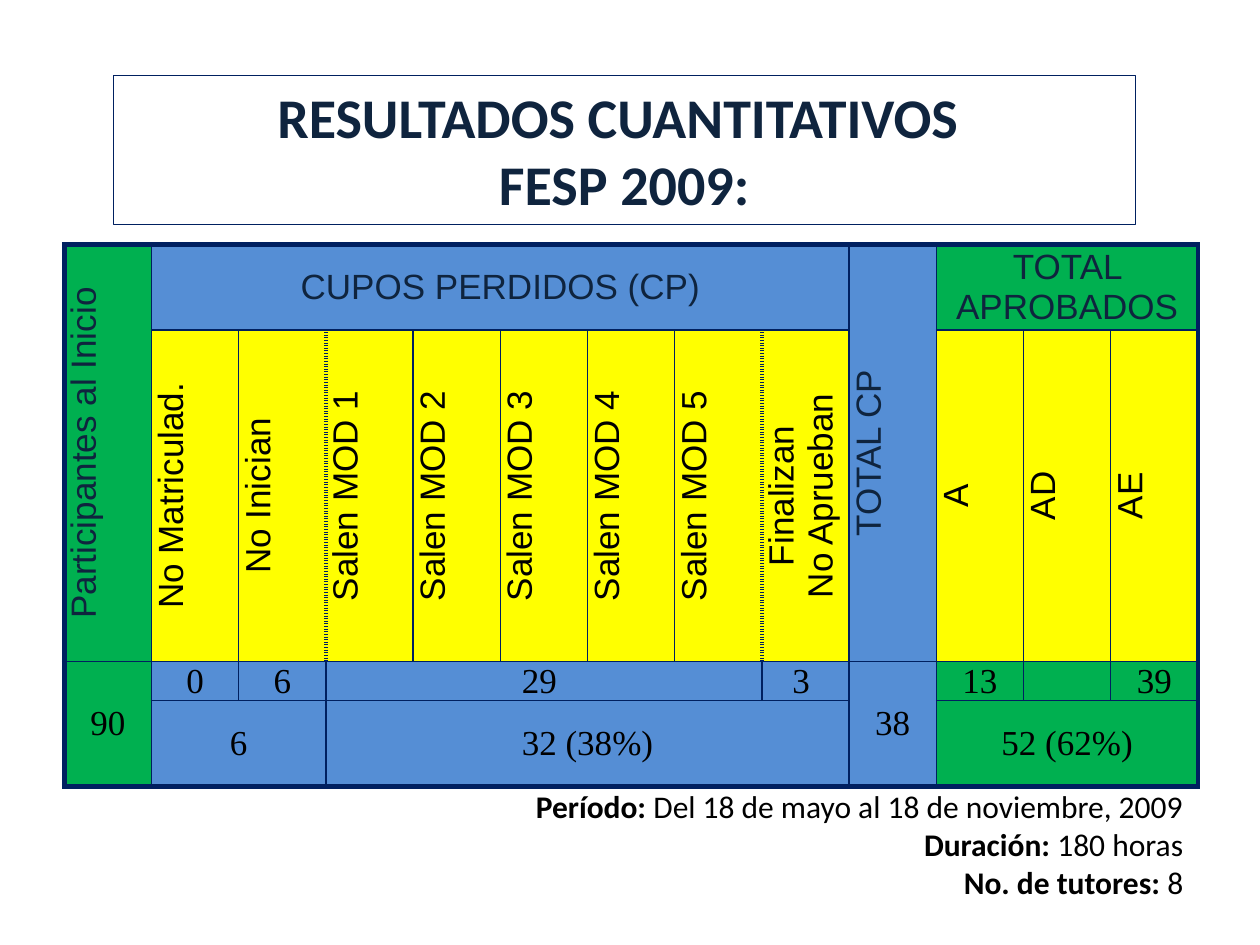
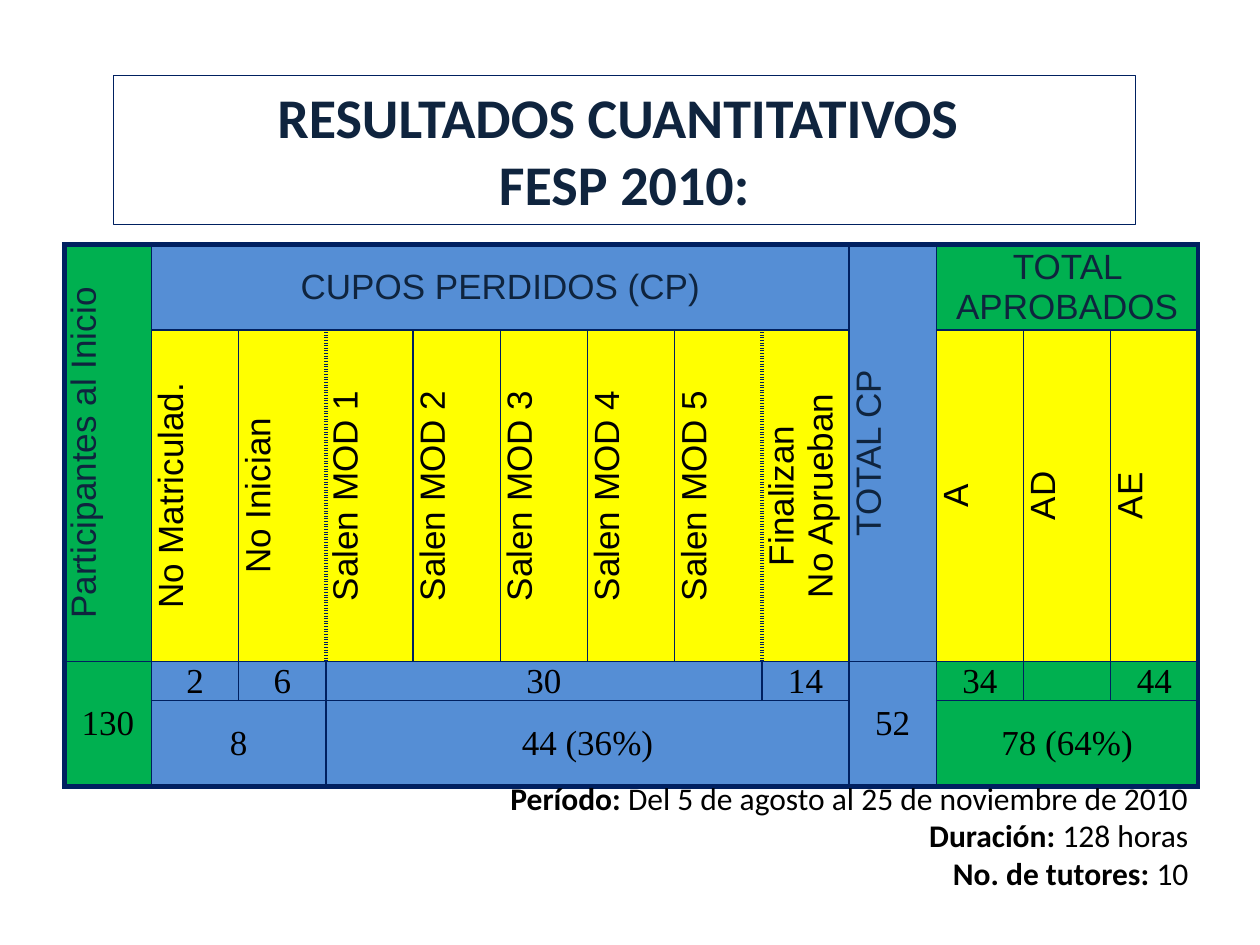
from lxml import etree
from pptx import Presentation
from pptx.dml.color import RGBColor
from pptx.enum.text import MSO_ANCHOR as Anchor, MSO_AUTO_SIZE as AutoSize, PP_ALIGN as Align
from pptx.oxml.ns import qn
from pptx.util import Inches, Pt

NAVY = RGBColor(0x00, 0x20, 0x60)
INK = RGBColor(0x0F, 0x24, 0x3E)
BLACK = RGBColor(0x00, 0x00, 0x00)
GREEN = RGBColor(0x00, 0xB0, 0x50)
BLUE = RGBColor(0x55, 0x8E, 0xD5)
YELLOW = RGBColor(0xFF, 0xFF, 0x00)

TITLE_FONT = {"name": "Calibri", "size": Pt(32), "bold": True}
HEAD_FONT = {"name": "Arial", "size": Pt(20)}
NUMBER_FONT = {"name": "Times New Roman", "size": Pt(20)}
NOTE_FONT = {"name": "Calibri", "size": Pt(18)}
CELL_FORMAT = {"vertical_anchor": Anchor.MIDDLE, "margin_left": Inches(0.07),
               "margin_right": Inches(0.07), "margin_top": 0, "margin_bottom": 0}

TITLE_BOX = (0.9, 0.6, 8.11, 1.18)
TABLE_BOX = (0.51, 1.94, 9, 3.88)
ROW_HEIGHTS = (0.68, 2.18, 0.31, 0.68)
COLUMNS = 13
DOTTED_EDGES = (3, 8)
NO_GRID_STYLE = "{2D5ABB26-0587-4C30-8999-92F81FD0307C}"

GROUP_HEADS = [
    (0, 0, 2, 1, "Participantes al Inicio", GREEN, True),
    (0, 1, 1, 8, "CUPOS PERDIDOS (CP)", BLUE, False),
    (0, 9, 2, 1, "TOTAL CP", BLUE, True),
    (0, 10, 1, 3, "TOTAL APROBADOS", GREEN, False),
]
LOST_HEADS = (["No Matriculad.", "No Inician"]
              + [f"Salen MOD {number}" for number in range(1, 6)]
              + ["Finalizan\nNo Aprueban"])
PASSED_HEADS = ["A", "AD", "AE"]
COLUMN_HEADS = [(1, first + offset, 1, 1, text, YELLOW, True)
                for first, heads in ((1, LOST_HEADS), (10, PASSED_HEADS))
                for offset, text in enumerate(heads)]
RESULT_BLOCKS = [
    (2, 0, 2, 1, GREEN), (2, 1, 1, 1, BLUE), (2, 2, 1, 1, BLUE),
    (2, 3, 1, 5, BLUE), (2, 8, 1, 1, BLUE), (2, 9, 2, 1, BLUE),
    (2, 10, 1, 1, GREEN), (2, 11, 1, 1, GREEN), (2, 12, 1, 1, GREEN),
    (3, 1, 1, 2, BLUE), (3, 3, 1, 6, BLUE), (3, 10, 1, 3, GREEN),
]

COURSES = [
    {
        "year": 2009,
        "results": ["90", "0", "6", "29 ", "3 ", "38", "13", "", "39",
                    "6", "32 (38%)", "52 (62%)"],
        "notes": [("Período:", " Del 18 de mayo al 18 de noviembre, 2009"),
                  ("Duración:", " 180 horas"), ("No. de tutores:", " 8")],
        "notes_box": (2.56, 6.2, 6.93, 1.01),
    },
    {
        "year": 2010,
        "results": ["130", "2", "6", "30", "14", "52", "34", "", "44",
                    "8", "44 (36%)", "78 (64%)"],
        "notes": [("Período:", " Del 5 de agosto al 25 de noviembre de 2010"),
                  ("Duración:", " 128 horas"), ("No. de tutores:", " 10")],
        "notes_box": (3.74, 6.13, 5.79, 1.01),
    },
]


def apply_format(target, values):
    """Set every attribute in a dict of format values."""
    for name, value in values.items():
        setattr(target, name, value)


def add_span(para, text, font, color):
    """Add a formatted run to a paragraph and return it."""
    span = para.add_run()
    span.text = text
    apply_format(span.font, font)
    span.font.color.rgb = color
    return span


def next_para(frame, index):
    """Return the first paragraph of a frame or add a further one."""
    return frame.paragraphs[0] if index == 0 else frame.add_paragraph()


def make_line(tag, width, dash="solid"):
    """Build a navy line element with the given width in points."""
    line = etree.Element(qn(tag), w=str(Pt(width)))
    fill = etree.SubElement(line, qn("a:solidFill"))
    etree.SubElement(fill, qn("a:srgbClr"), val=str(NAVY))
    etree.SubElement(line, qn("a:prstDash"), val=dash)
    return line


def add_borders(cell, row, column, height, width):
    """Draw the edges of the block that a cell belongs to."""
    right, bottom = column + width, row + height
    edges = {
        "a:lnL": (column == 0, column),
        "a:lnR": (right == COLUMNS, right),
        "a:lnT": (row == 0, None),
        "a:lnB": (bottom == len(ROW_HEIGHTS), None),
    }
    properties = cell._tc.get_or_add_tcPr()
    for tag, (outer, edge) in edges.items():
        dotted = row == 1 and edge in DOTTED_EDGES
        properties.append(make_line(tag, 3 if outer or dotted else 1,
                                    "sysDot" if dotted else "solid"))


def write_cell(cell, text, font, color):
    """Write centred lines with an outline around the letters."""
    lines = text.split("\n")
    for index, line in enumerate(lines):
        para = next_para(cell.text_frame, index)
        para.alignment = Align.CENTER
        para.space_before = Pt(2 if index == 0 else 0)
        para.space_after = Pt(2 if index == len(lines) - 1 else 0)
        if line:
            span = add_span(para, line, font, color)
            span._r.get_or_add_rPr().insert(0, make_line("a:ln", 0.75))
        else:
            apply_format(para.font, font)


def fill_block(table, row, column, height, width, text, fill, turned=False):
    """Merge, border, colour and write one block of the table."""
    origin = table.cell(row, column)
    if height * width > 1:
        origin.merge(table.cell(row + height - 1, column + width - 1))
    for across in range(column, column + width):
        for down in range(row, row + height):
            cell = table.cell(down, across)
            add_borders(cell, row, column, height, width)
            cell.fill.solid()
            cell.fill.fore_color.rgb = fill
    apply_format(origin, CELL_FORMAT)
    if turned:
        origin._tc.get_or_add_tcPr().set("vert", "vert270")
    write_cell(origin, text, HEAD_FONT if row < 2 else NUMBER_FONT,
               INK if row == 0 else BLACK)


def add_title(page, box, year):
    """Place the framed two-line title."""
    title = page.shapes.title
    apply_format(title, dict(zip(("left", "top", "width", "height"), map(Inches, box))))
    title.line.color.rgb = NAVY
    title.line.width = Pt(0.75)
    frame = title.text_frame
    apply_format(frame, {"word_wrap": True, "auto_size": AutoSize.NONE})
    for index, text in enumerate(("RESULTADOS CUANTITATIVOS ", f"FESP {year}:")):
        para = next_para(frame, index)
        para.alignment = Align.CENTER
        add_span(para, text, TITLE_FONT, INK)


def add_results(page, box, results):
    """Build the table of places lost and participants passed."""
    table = page.shapes.add_table(len(ROW_HEIGHTS), COLUMNS, *map(Inches, box)).table
    apply_format(table, {"first_row": False, "horz_banding": False})
    table._tbl.tblPr.find(qn("a:tableStyleId")).text = NO_GRID_STYLE
    for column in table.columns:
        column.width = Inches(box[2] / COLUMNS)
    for row, height in zip(table.rows, ROW_HEIGHTS):
        row.height = Inches(height)
    for block in GROUP_HEADS + COLUMN_HEADS:
        fill_block(table, *block)
    for (*place, fill), text in zip(RESULT_BLOCKS, results):
        fill_block(table, *place, text, fill)


def add_notes(page, box, notes):
    """Place the right-aligned course details."""
    frame = page.shapes.add_textbox(*map(Inches, box)).text_frame
    apply_format(frame, {"word_wrap": True, "auto_size": AutoSize.SHAPE_TO_FIT_TEXT})
    for index, (label, detail) in enumerate(notes):
        para = next_para(frame, index)
        para.alignment = Align.RIGHT
        add_span(para, label, NOTE_FONT | {"bold": True}, BLACK)
        add_span(para, detail, NOTE_FONT | {"bold": False}, BLACK)


def add_course(deck, course):
    """Add the results slide of one course."""
    page = deck.slides.add_slide(deck.slide_layouts.get_by_name("Title Only"))
    add_title(page, TITLE_BOX, course["year"])
    add_results(page, TABLE_BOX, course["results"])
    add_notes(page, course["notes_box"], course["notes"])


def main():
    """Build and save the deck."""
    deck = Presentation()
    apply_format(deck, {"slide_width": Inches(10), "slide_height": Inches(7.5)})
    for course in COURSES:
        add_course(deck, course)
    deck.save("out.pptx")


if __name__ == "__main__":
    main()
